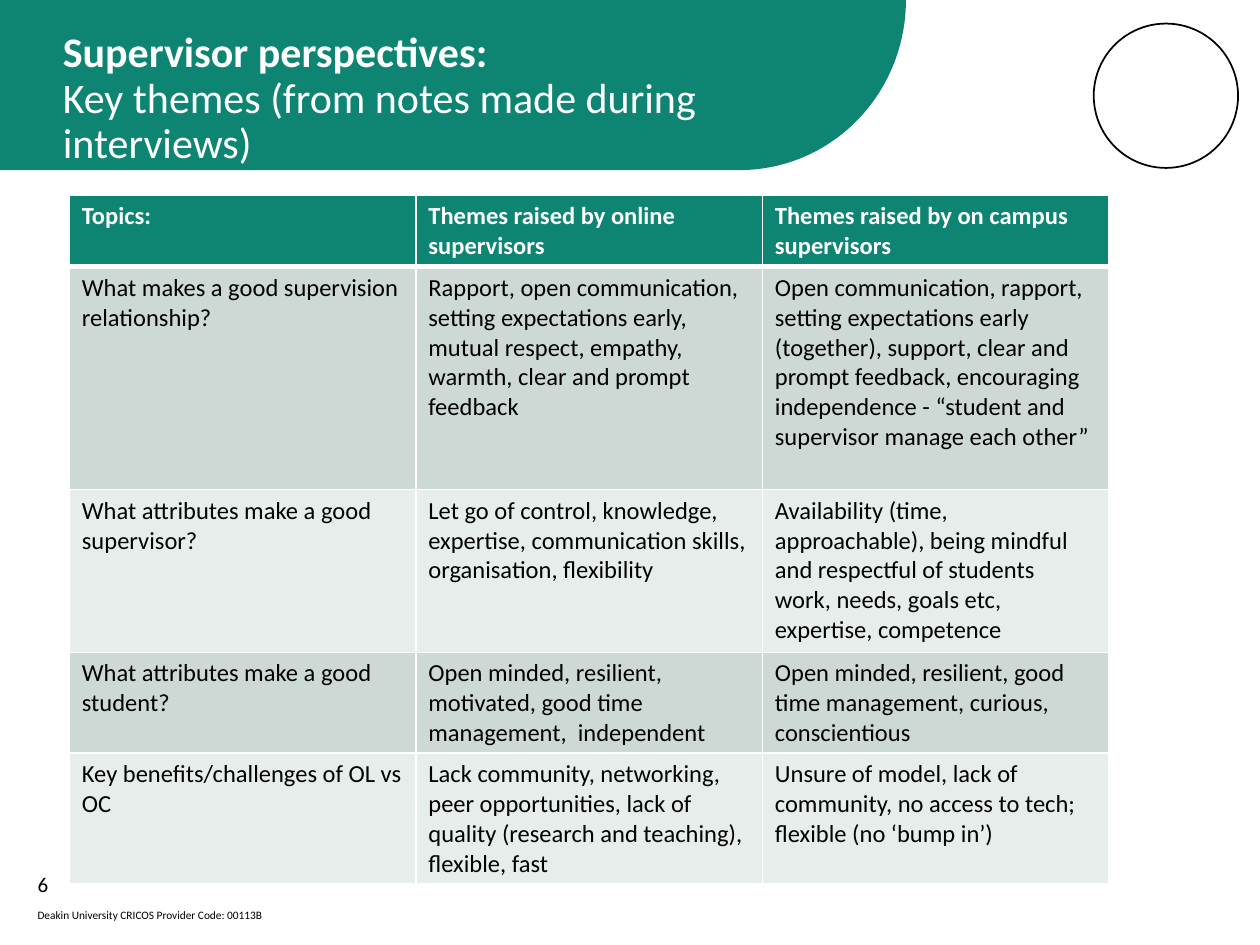
import math

import pptx
import pptx.dml.color
import pptx.enum.shapes
import pptx.enum.text
import pptx.oxml
import pptx.oxml.ns
import pptx.util

Pt = pptx.util.Pt
RGBColor = pptx.dml.color.RGBColor
ANCHOR = pptx.enum.text.MSO_ANCHOR

GREEN = RGBColor(0x0D, 0x85, 0x72)
DARK_BAND = RGBColor(0xCC, 0xD9, 0xD5)
LIGHT_BAND = RGBColor(0xE7, 0xED, 0xEB)
WHITE = RGBColor(0xFF, 0xFF, 0xFF)
BLACK = RGBColor(0, 0, 0)

ROW_HEIGHTS = [40.3, 127.4, 92.9, 57.6, 74.9]
THEMES = [
    ["Topics:", "Themes raised by online supervisors",
     "Themes raised by on campus supervisors"],
    ["What makes a good supervision relationship?",
     "Rapport, open communication, setting expectations early, mutual respect, "
     "empathy, warmth, clear and prompt feedback",
     "Open communication, rapport, setting expectations early (together), support, "
     "clear and prompt feedback, encouraging independence - “student and supervisor "
     "manage each other”"],
    ["What attributes make a good supervisor?",
     "Let go of control, knowledge, expertise, communication skills, organisation, "
     "flexibility",
     "Availability (time, approachable), being mindful and respectful of students "
     "work, needs, goals etc, expertise, competence"],
    ["What attributes make a good student?",
     "Open minded, resilient, motivated, good time management,  independent",
     "Open minded, resilient, good time management, curious, conscientious"],
    ["Key benefits/challenges of OL vs OC",
     "Lack community, networking, peer opportunities, lack of quality (research and "
     "teaching), flexible, fast",
     "Unsure of model, lack of community, no access to tech; flexible (no ‘bump in’)"],
]


class Deck:
    """Holds the style and the current slide."""
    font = "Calibri"

    def __init__(self, prs):
        self.s = prs.slides.add_slide(prs.slide_layouts[6])

    def run(self, p, text, size, color, bold=False):
        r = p.add_run()
        r.text = text
        r.font.name = self.font
        r.font.size = Pt(size)
        r.font.bold = bold
        r.font.color.rgb = color

    def text(self, x, y, w, h, lines, size, color, anchor=ANCHOR.MIDDLE, spacing=None):
        tf = self.s.shapes.add_textbox(Pt(x), Pt(y), Pt(w), Pt(h)).text_frame
        tf.word_wrap = True
        tf.vertical_anchor = anchor
        p = tf.paragraphs[0]
        p.line_spacing = spacing
        for i, (line, bold) in enumerate(lines):
            if i:
                p.add_line_break()
            self.run(p, line, size, color, bold)

    def banner(self, width, height, radius_x, color):
        """Band from the slide corner with a rounded lower right corner."""
        steps = 60
        angles = [math.pi / 2 * i / steps for i in range(steps + 1)]
        curve = [(Pt(width - radius_x + radius_x * math.cos(a)),
                  Pt(height * math.sin(a))) for a in angles]
        fb = self.s.shapes.build_freeform(0, 0)
        fb.add_line_segments(curve + [(0, Pt(height))], close=True)
        sp = fb.convert_to_shape()
        sp.shadow.inherit = False
        sp.fill.solid()
        sp.fill.fore_color.rgb = color
        sp.line.fill.background()

    def ring(self, x, y, size, color, weight):
        sp = self.s.shapes.add_shape(pptx.enum.shapes.MSO_SHAPE.OVAL,
                                     Pt(x), Pt(y), Pt(size), Pt(size))
        sp.shadow.inherit = False
        sp.fill.background()
        sp.line.color.rgb = color
        sp.line.width = Pt(weight)

    def borders(self, cell, color, widths):
        tc_pr = cell._tc.get_or_add_tcPr()
        for i, (side, width) in enumerate(zip("LRTB", widths)):
            tc_pr.insert(i, pptx.oxml.parse_xml(
                f'<a:ln{side} {pptx.oxml.ns.nsdecls("a")} w="{Pt(width)}"><a:solidFill>'
                f'<a:srgbClr val="{color}"/></a:solidFill></a:ln{side}>'))

    def table(self, x, y, col_width, heights, rows, size):
        n = len(rows[0])
        table = self.s.shapes.add_table(len(rows), n, Pt(x), Pt(y), Pt(col_width * n),
                                        Pt(sum(heights))).table
        for col in table.columns:
            col.width = Pt(col_width)
        for i, (height, row) in enumerate(zip(heights, rows)):
            table.rows[i].height = Pt(height)
            header = i == 0
            fill = GREEN if header else DARK_BAND if i % 2 else LIGHT_BAND
            for j, text in enumerate(row):
                cell = table.cell(i, j)
                cell.fill.solid()
                cell.fill.fore_color.rgb = fill
                top, bottom = 3 if i == 1 else 1, 3 if header else 1
                self.borders(cell, WHITE, (1, 1, top, bottom))
                self.run(cell.text_frame.paragraphs[0], text, size,
                         WHITE if header else BLACK, header)


def main():
    prs = pptx.Presentation()
    prs.slide_width, prs.slide_height = Pt(720), Pt(540)
    deck = Deck(prs)

    # Banner and round mark
    deck.banner(517.7, 97.2, 95, GREEN)
    deck.ring(625, 13.5, 82.5, BLACK, 1)

    # Footer, title and slide number
    deck.text(14.4, 514.8, 391, 15.8,
              [("Deakin University CRICOS Provider Code: 00113B", False)], 6.5, BLACK)
    deck.text(28.8, 14.4, 485, 75.6,
              [("Supervisor perspectives:", True),
               ("Key themes (from notes made during interviews)", False)],
              24, WHITE, ANCHOR.TOP, 0.9)
    deck.text(14.4, 495.4, 33.8, 19.4, [("6", False)], 12, BLACK)

    # Themes by topic
    deck.table(39.6, 111.6, 198, ROW_HEIGHTS, THEMES, 14)

    prs.save("out.pptx")


if __name__ == "__main__":
    main()
